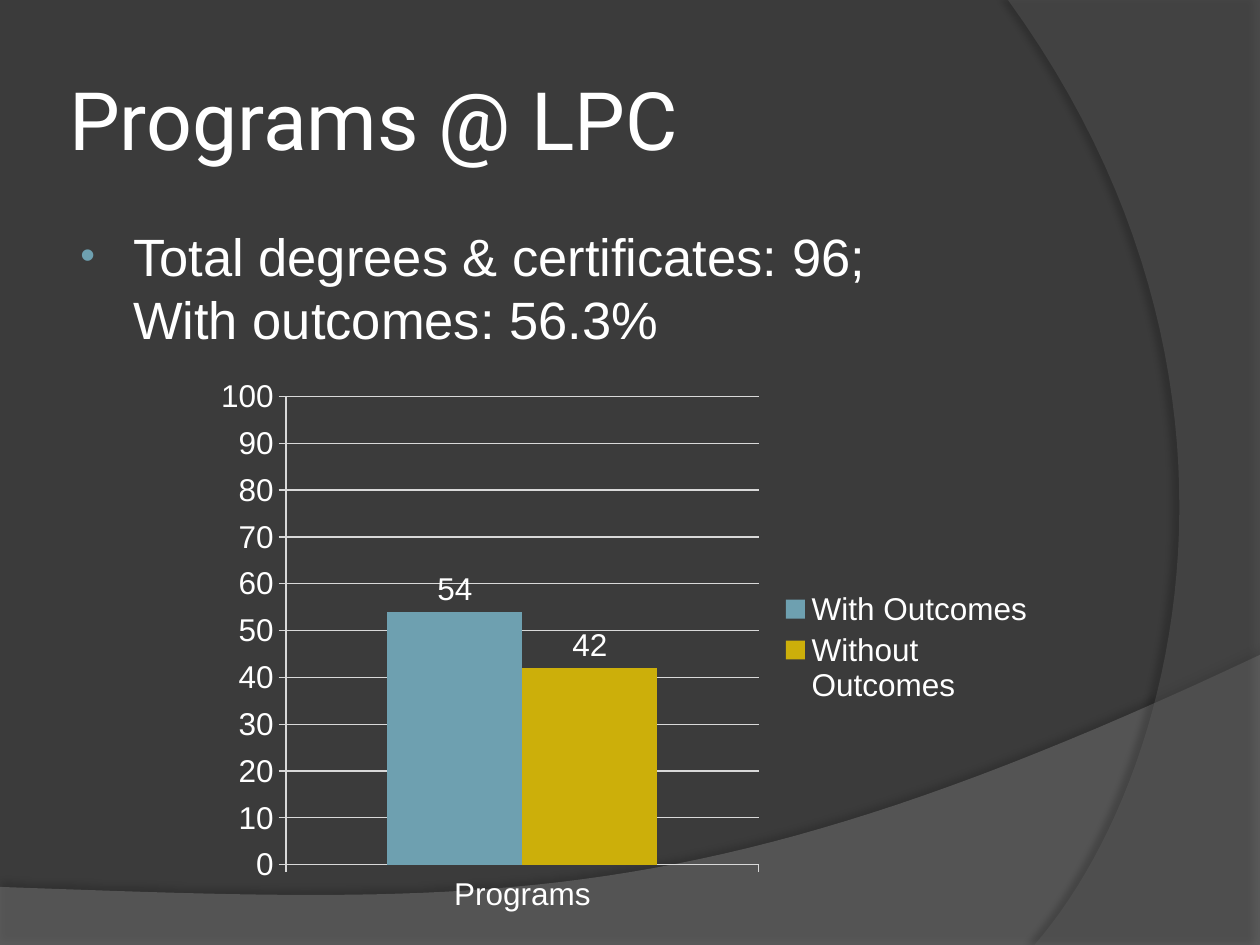
from dataclasses import dataclass

from pptx import Presentation
from pptx.chart.data import CategoryChartData as Data
from pptx.dml.color import RGBColor as RGB
from pptx.enum.chart import XL_CHART_TYPE as Kind
from pptx.enum.chart import XL_LABEL_POSITION as Spot
from pptx.enum.chart import XL_LEGEND_POSITION as Side
from pptx.enum.chart import XL_TICK_MARK as Tick
from pptx.enum.text import MSO_ANCHOR as Anchor
from pptx.oxml import parse_xml
from pptx.oxml.ns import nsdecls
from pptx.oxml.xmlchemy import OxmlElement as Node
from pptx.util import Inches, Pt


@dataclass(frozen=True)
class Theme:
    back: str = "3B3B3B"
    wave: str = "7F7F7F"
    arc: str = "5E5E5E"
    dark: str = "000000"
    ink: str = "FFFFFF"
    rule: str = "D9D9D9"
    blue: str = "6EA0B0"
    gold: str = "CCAF0A"
    head: str = "Roboto"
    body: str = "Arial"
    big: int = 46
    mid: int = 30
    small: int = 18


LOOK = Theme()
WIDE, HIGH = Inches(10), Inches(7.5)


def area(left, top, width, height):
    """Turn shares of the slide into lengths."""
    return (int(left * WIDE), int(top * HIGH),
            int(width * WIDE), int(height * HIGH))


def style(font, name, size):
    font.name, font.size = name, Pt(size)
    font.color.rgb = RGB.from_string(LOOK.ink)


def curve(ends, steps=48):
    """Points along a cubic curve with four control points."""
    a, b, c, d = ends
    for i in range(1, steps + 1):
        t = i / steps
        u = 1 - t
        yield tuple(u**3 * p + 3 * u * u * t * q + 3 * u * t * t * r + t**3 * s
                    for p, q, r, s in zip(a, b, c, d))


def sweep(slide, box, edge, bend, color, alpha, shade):
    """Draw straight edges, then a bend; points are shares of the box."""
    left, top, width, height = box
    points = [(int(left + x * width), int(top + y * height))
              for x, y in edge + list(curve([edge[-1]] + bend))]
    pen = slide.shapes.build_freeform(*points[0], scale=1.0)
    pen.add_line_segments(points[1:], close=True)
    shape = pen.convert_to_shape()
    shape.fill.solid()
    shape.fill.fore_color.rgb = RGB.from_string(color)
    shape.line.fill.background()
    shape.shadow.inherit = False

    # See-through fill and soft shadow
    props = shape.element.spPr
    tint = Node("a:alpha")
    tint.set("val", str(alpha * 1000))
    props.xpath("./a:solidFill/a:srgbClr")[0].append(tint)
    dense, blur, dist, turn = shade
    props.xpath("./a:effectLst")[0].append(parse_xml(
        f'<a:outerShdw {nsdecls("a")} blurRad="{Pt(blur)}" '
        f'dist="{Pt(dist)}" dir="{turn * 60000}" rotWithShape="0">'
        f'<a:srgbClr val="{LOOK.dark}"><a:alpha val="{dense * 1000}"/>'
        '</a:srgbClr></a:outerShdw>'))


def scene(slide):
    """Background with the low wave and the right-hand arc."""
    fill = slide.background.fill
    fill.solid()
    fill.fore_color.rgb = RGB.from_string(LOOK.back)
    sweep(slide, area(0, 0.693, 1, 0.307),
          [(0, 0.8), (0, 1), (1, 1), (1, 0)],
          [(0.559, 0.905), (0.391, 0.86), (0, 0.8)],
          LOOK.wave, 45, (35, 4, 3.5, 270))
    sweep(slide, area(0.8, 0, 0.2, 1),
          [(1, 0), (1, 1), (0.105, 1)],
          [(0.675, 0.825), (1.09, 0.4), (0, 0)],
          LOOK.arc, 40, (45, 4, 4, 180))


def words(slide, box, text, name, size, anchor):
    frame = slide.shapes.add_textbox(*box).text_frame
    frame.word_wrap = True
    frame.vertical_anchor = anchor
    frame.margin_left = frame.margin_right = Inches(0.05)
    frame.margin_top = frame.margin_bottom = Inches(0.05)
    para = frame.paragraphs[0]
    para.text = text
    style(para.font, name, size)
    return frame


def title(slide, box):
    words(slide, box, "Programs @ LPC", LOOK.head, LOOK.big, Anchor.MIDDLE)


def point(slide, box):
    """One bulleted statement with a hanging indent."""
    frame = words(slide, box,
                  "Total degrees & certificates: 96;\nWith outcomes: 56.3%",
                  LOOK.body, LOOK.mid, Anchor.TOP)
    frame.margin_left = frame.margin_right = Inches(0.1)
    para = frame.paragraphs[0]
    para.space_before = Pt(LOOK.mid * 0.2)
    props = para._p.get_or_add_pPr()
    props.set("marL", str(Inches(0.46)))
    props.set("indent", str(Inches(-0.42)))
    marks = parse_xml(
        f'<a:pPr {nsdecls("a")}><a:buClr><a:srgbClr val="{LOOK.blue}"/>'
        '</a:buClr><a:buSzPct val="80000"/>'
        f'<a:buFont typeface="{LOOK.body}"/><a:buChar char="•"/></a:pPr>')
    at = len(props.xpath("./a:lnSpc | ./a:spcBef | ./a:spcAft"))
    props[at:at] = list(marks)


def settle(node, at, box, inner=False):
    """Fix a chart part at shares of the chart's size."""
    for old in node.xpath("./c:layout"):
        node.remove(old)
    target = '<c:layoutTarget val="inner"/>' if inner else ""
    sizes = "".join(f'<c:{key} val="{val}"/>'
                    for key, val in zip("xywh", box))
    node.insert(at, parse_xml(
        f'<c:layout {nsdecls("c")}><c:manualLayout>{target}'
        '<c:xMode val="edge"/><c:yMode val="edge"/>'
        f'{sizes}</c:manualLayout></c:layout>'))


def graph(slide, box):
    data = Data()
    data.categories = ["Programs"]
    data.add_series("With Outcomes", [54])
    data.add_series("Without Outcomes", [42])
    chart = slide.shapes.add_chart(Kind.COLUMN_CLUSTERED, *box, data).chart
    chart.has_title = False
    style(chart.font, LOOK.body, LOOK.small)

    # Columns and their values
    plot = chart.plots[0]
    plot.vary_by_categories = False
    plot.gap_width, plot.overlap = 150, 0
    for row, color in zip(plot.series, (LOOK.blue, LOOK.gold)):
        row.format.fill.solid()
        row.format.fill.fore_color.rgb = RGB.from_string(color)
        tags = row.data_labels
        tags.show_value = True
        tags.position = Spot.OUTSIDE_END
        style(tags.font, LOOK.body, LOOK.small)

    # Axes and grid
    scale = chart.value_axis
    scale.minimum_scale, scale.maximum_scale, scale.major_unit = 0, 100, 10
    scale.has_major_gridlines = True
    for axis in (scale, chart.category_axis):
        axis.major_tick_mark = Tick.OUTSIDE
        axis.minor_tick_mark = Tick.NONE
    for part in (scale, scale.major_gridlines, chart.category_axis):
        part.format.line.width = Pt(0.75)
        part.format.line.color.rgb = RGB.from_string(LOOK.rule)

    # Legend and placement
    chart.has_legend = True
    key = chart.legend
    key.position = Side.RIGHT
    key.include_in_layout = False
    style(key.font, LOOK.body, LOOK.small)
    settle(chart.element.xpath(".//c:plotArea")[0], 0,
           (0.1, 0.05, 0.56, 0.84), inner=True)
    settle(chart.element.xpath(".//c:legend")[0], 1,
           (0.68, 0.39, 0.31, 0.22))


def main():
    deck = Presentation()
    deck.slide_width, deck.slide_height = WIDE, HIGH
    slide = deck.slides.add_slide(deck.slide_layouts[6])
    scene(slide)
    title(slide, area(0.05, 0.04, 0.82, 0.17))
    point(slide, area(0.05, 0.23, 0.88, 0.17))
    graph(slide, area(0.16, 0.39, 0.67, 0.59))
    deck.save("out.pptx")


if __name__ == "__main__":
    main()
